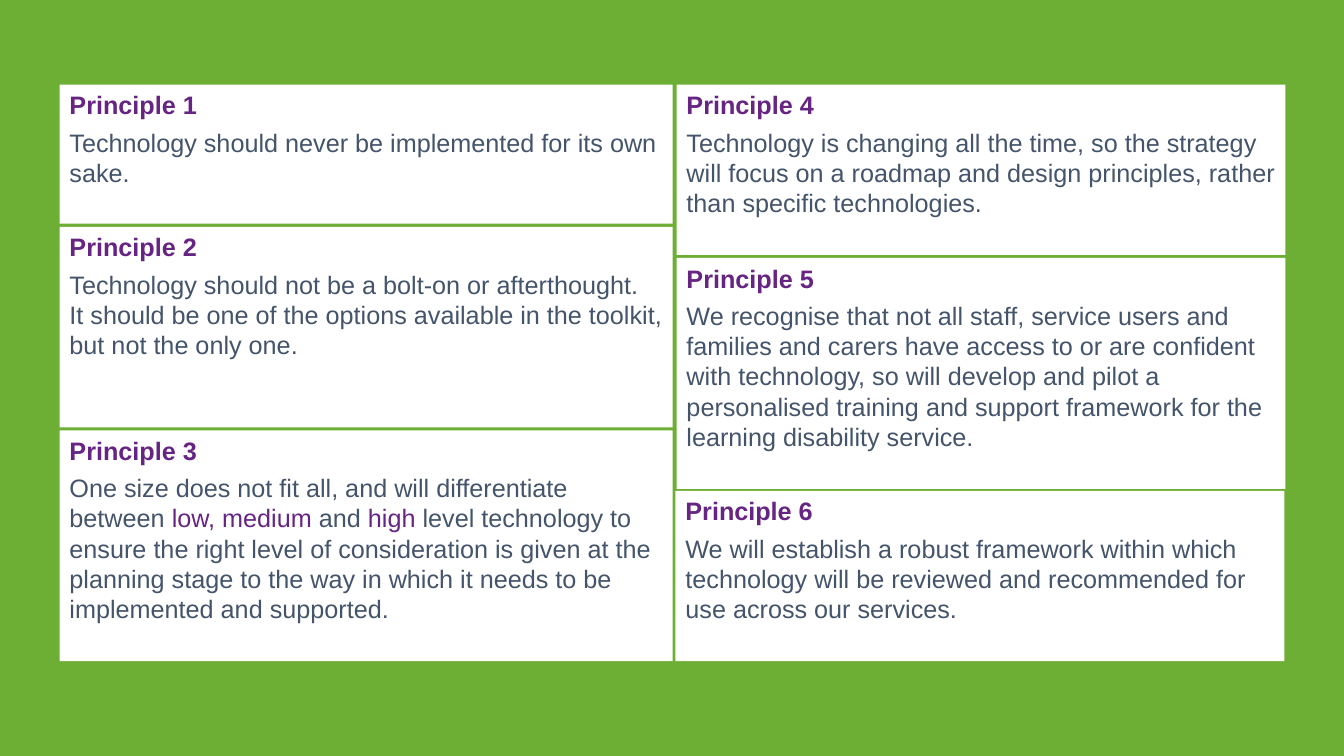
from dataclasses import dataclass

from pptx import Presentation
from pptx.dml.color import RGBColor
from pptx.enum.shapes import MSO_SHAPE
from pptx.enum.text import MSO_ANCHOR, PP_ALIGN
from pptx.util import Inches, Pt

RECTANGLE = MSO_SHAPE.RECTANGLE
TOP = MSO_ANCHOR.TOP
LEFT = PP_ALIGN.LEFT
BLANK_LAYOUT = 6


@dataclass(frozen=True)
class Theme:
    """Colours, font and type size, and spacing of the slide."""
    background: RGBColor = RGBColor.from_string("6DAF34")
    panel: RGBColor = RGBColor.from_string("FFFFFF")
    accent: RGBColor = RGBColor.from_string("662483")
    body: RGBColor = RGBColor.from_string("44546A")
    font: str = "Arial"
    size: Pt = Pt(18)
    heading_gap: Pt = Pt(5)
    panel_gap: float = 0.4


class PrinciplesSlide:
    """Draws panels at percentages of the slide's width and height."""

    def __init__(self, deck, theme):
        self.deck = deck
        self.theme = theme
        self.slide = deck.slides.add_slide(deck.slide_layouts[BLANK_LAYOUT])
        fill = self.slide.background.fill
        fill.solid()
        fill.fore_color.rgb = theme.background

    def column(self, left, top, width, principles):
        for heading, height, body in principles:
            self.panel(left, top, width, height, heading, body)
            top += height + self.theme.panel_gap

    def panel(self, left, top, width, height, heading, body):
        across = self.deck.slide_width / 100
        down = self.deck.slide_height / 100
        panel = self.slide.shapes.add_shape(
            RECTANGLE, round(left * across), round(top * down),
            round(width * across), round(height * down))
        panel.shadow.inherit = False
        panel.fill.solid()
        panel.fill.fore_color.rgb = self.theme.panel
        panel.line.fill.background()
        frame = panel.text_frame
        frame.word_wrap = True
        frame.vertical_anchor = TOP
        title = frame.paragraphs[0]
        title.space_after = self.theme.heading_gap
        self.fill_paragraph(title, [heading], self.theme.accent, True)
        self.fill_paragraph(frame.add_paragraph(), body, self.theme.body, False)

    def fill_paragraph(self, paragraph, segments, colour, bold):
        paragraph.alignment = LEFT
        font = paragraph.font
        font.name, font.size, font.bold = self.theme.font, self.theme.size, bold
        for position, segment in enumerate(segments):
            highlighted = position % 2 == 1
            for number, line in enumerate(segment.split("\n")):
                if number:
                    paragraph.add_line_break()
                run = paragraph.add_run()
                run.text = line
                run.font.color.rgb = self.theme.accent if highlighted else colour


COLUMNS = [
    (4.43, 11.2, 45.61, [
        ("Principle 1", 18.4, [
            "Technology should never be implemented for its own sake."]),
        ("Principle 2", 26.53, [
            "Technology should not be a bolt-on or afterthought.\n"
            "It should be one of the options available in the toolkit, "
            "but not the only one."]),
        ("Principle 3", 30.53, [
            "One size does not fit all, and will differentiate between ",
            "low, medium", " and ", "high",
            " level technology to ensure the right level of consideration is "
            "given at the planning stage to the way in which it needs to be "
            "implemented and supported."]),
    ]),
    (50.34, 11.2, 45.31, [
        ("Principle 4", 22.53, [
            "Technology is changing all the time, so the strategy will focus "
            "on a roadmap and design principles, rather than specific "
            "technologies."]),
        ("Principle 5", 30.53, [
            "We recognise that not all staff, service users and families and "
            "carers have access to or are confident with technology, so will "
            "develop and pilot a personalised training and support framework "
            "for the learning disability service."]),
    ]),
    (50.26, 64.93, 45.31, [
        ("Principle 6", 22.53, [
            "We will establish a robust framework within which technology "
            "will be reviewed and recommended for use across our services."]),
    ]),
]


def main():
    deck = Presentation()
    deck.slide_width, deck.slide_height = Inches(13.33), Inches(7.5)
    principles_slide = PrinciplesSlide(deck, Theme())
    for left, top, width, principles in COLUMNS:
        principles_slide.column(left, top, width, principles)
    deck.save("out.pptx")


if __name__ == "__main__":
    main()
